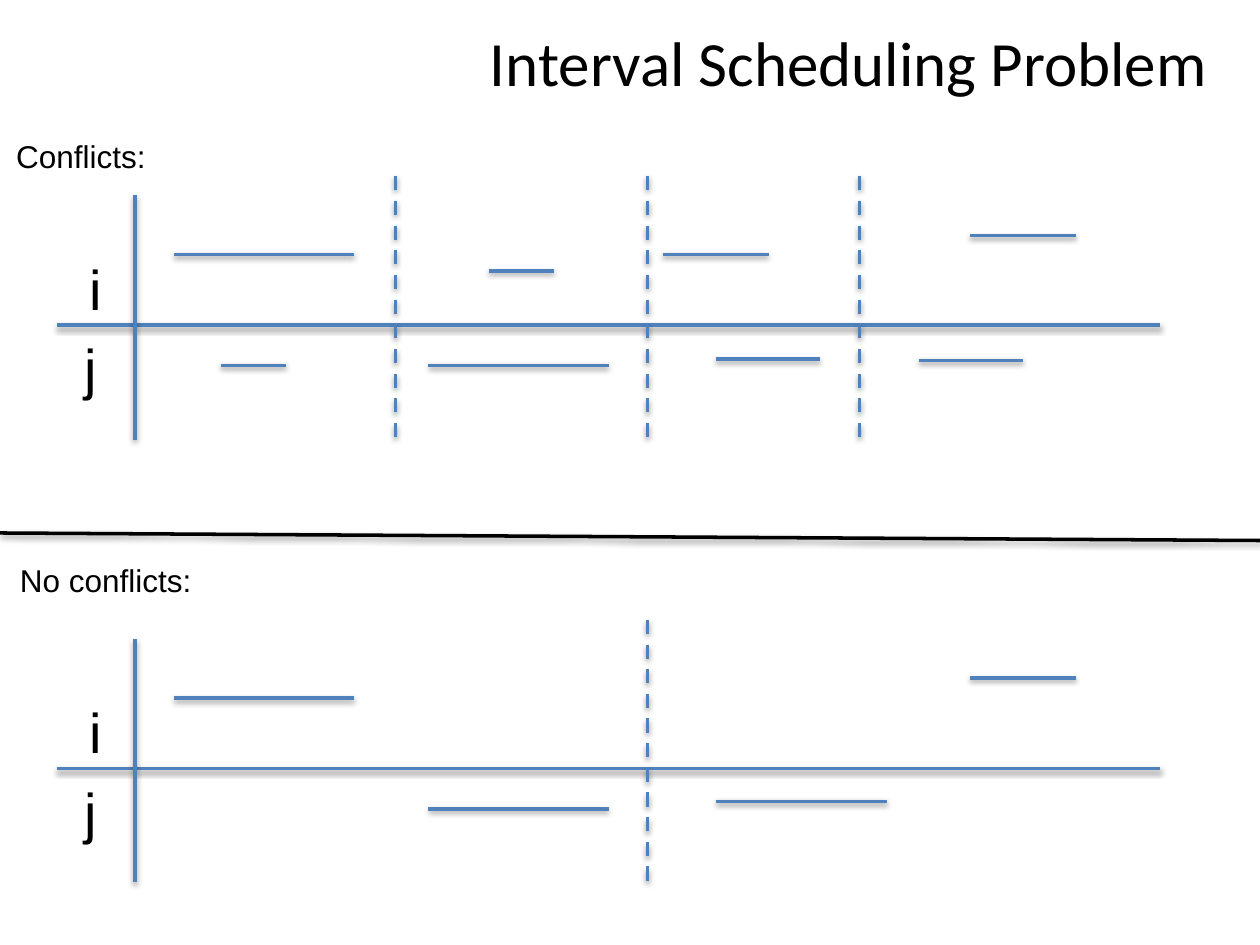
from lxml import etree
from pptx import Presentation
from pptx.dml.color import RGBColor
from pptx.enum.dml import MSO_LINE
from pptx.enum.shapes import MSO_CONNECTOR
from pptx.enum.text import MSO_ANCHOR, MSO_AUTO_SIZE, PP_ALIGN
from pptx.oxml import parse_xml
from pptx.util import Inches, Pt

BLUE, BLACK = "4F81BD", "000000"
NS = "http://schemas.openxmlformats.org/drawingml/2006/main"
SHADOW = f"""<a:effectLst xmlns:a="{NS}">
  <a:outerShdw blurRad="40000" dist="20000" dir="5400000" rotWithShape="0">
    <a:srgbClr val="000000"><a:alpha val="38000"/></a:srgbClr>
  </a:outerShdw>
</a:effectLst>"""


def paint(target, color):
    target.rgb = RGBColor.from_string(color)


def style(par, size, face):
    par.font.size = Pt(size)
    par.font.name = face
    paint(par.font.color, BLACK)


def rule(slide, x1, y1, x2, y2, color=BLUE, dash=False):
    line = slide.shapes.add_connector(
        MSO_CONNECTOR.STRAIGHT, Inches(x1), Inches(y1), Inches(x2), Inches(y2))
    line.line.width = Pt(2)
    paint(line.line.color, color)
    if dash:
        line.line.dash_style = MSO_LINE.DASH
    line._element.spPr.append(parse_xml(SHADOW))


def label(slide, text, x, y, wide, high, size):
    box = slide.shapes.add_textbox(
        Inches(x), Inches(y), Inches(wide), Inches(high))
    frame = box.text_frame
    frame.word_wrap = True
    frame.auto_size = MSO_AUTO_SIZE.SHAPE_TO_FIT_TEXT
    frame.text = text
    style(frame.paragraphs[0], size, "Arial")


def heading(slide, text, x, y, wide, high):
    title = slide.shapes.title
    title.left, title.top = Inches(x), Inches(y)
    title.width, title.height = Inches(wide), Inches(high)
    frame = title.text_frame
    frame.text = text
    frame.vertical_anchor = MSO_ANCHOR.MIDDLE
    frame.paragraphs[0].alignment = PP_ALIGN.CENTER
    style(frame.paragraphs[0], 36, "Calibri")


def chart(slide, left, top, wide, high, splits, spans):
    """Draw two job rows; splits and spans are offsets from the box."""
    # Axes
    rule(slide, left, top + 1.18, left + wide, top + 1.18)
    rule(slide, left + 0.62, top + 0.15, left + 0.62, top + high)
    # Dashed case dividers
    for x in splits:
        rule(slide, left + x, top, left + x, top + high, dash=True)
    # Job intervals: start, end, height
    for start, end, y in spans:
        rule(slide, left + start, top + y, left + end, top + y)
    # Row names
    label(slide, "i", left + 0.16, top + 0.57, 0.82, 0.64, 32)
    label(slide, "j", left + 0.12, top + 1.2, 0.82, 0.64, 32)


def main():
    deck = Presentation()
    deck.slide_width, deck.slide_height = Inches(10), Inches(7.5)
    slide = deck.slides.add_slide(deck.slide_layouts[5])
    heading(slide, "Interval Scheduling Problem", 2.43, 0.22, 8.61, 0.53)

    # Upper half: overlapping jobs
    label(slide, "Conflicts:", 0.03, 1.04, 2.27, 0.4, 18)
    chart(slide, 0.45, 1.4, 8.76, 2.09, (2.69, 4.69, 6.37), (
        (0.93, 2.36, 0.62), (1.3, 1.82, 1.5),
        (3.43, 3.95, 0.75), (2.95, 4.38, 1.5),
        (4.81, 5.65, 0.62), (5.23, 6.06, 1.45),
        (7.25, 8.09, 0.47), (6.84, 7.67, 1.46)))

    # Divider between halves
    rule(slide, 0, 4.23, 10, 4.29, BLACK)

    # Lower half: separate jobs
    label(slide, "No conflicts:", 0.06, 4.4, 2.27, 0.4, 18)
    chart(slide, 0.45, 4.92, 8.76, 2.08, (4.69,), (
        (0.93, 2.36, 0.62), (2.95, 4.38, 1.5),
        (7.25, 8.09, 0.46), (5.23, 6.59, 1.44)))

    deck.save("out.pptx")


if __name__ == "__main__":
    main()
